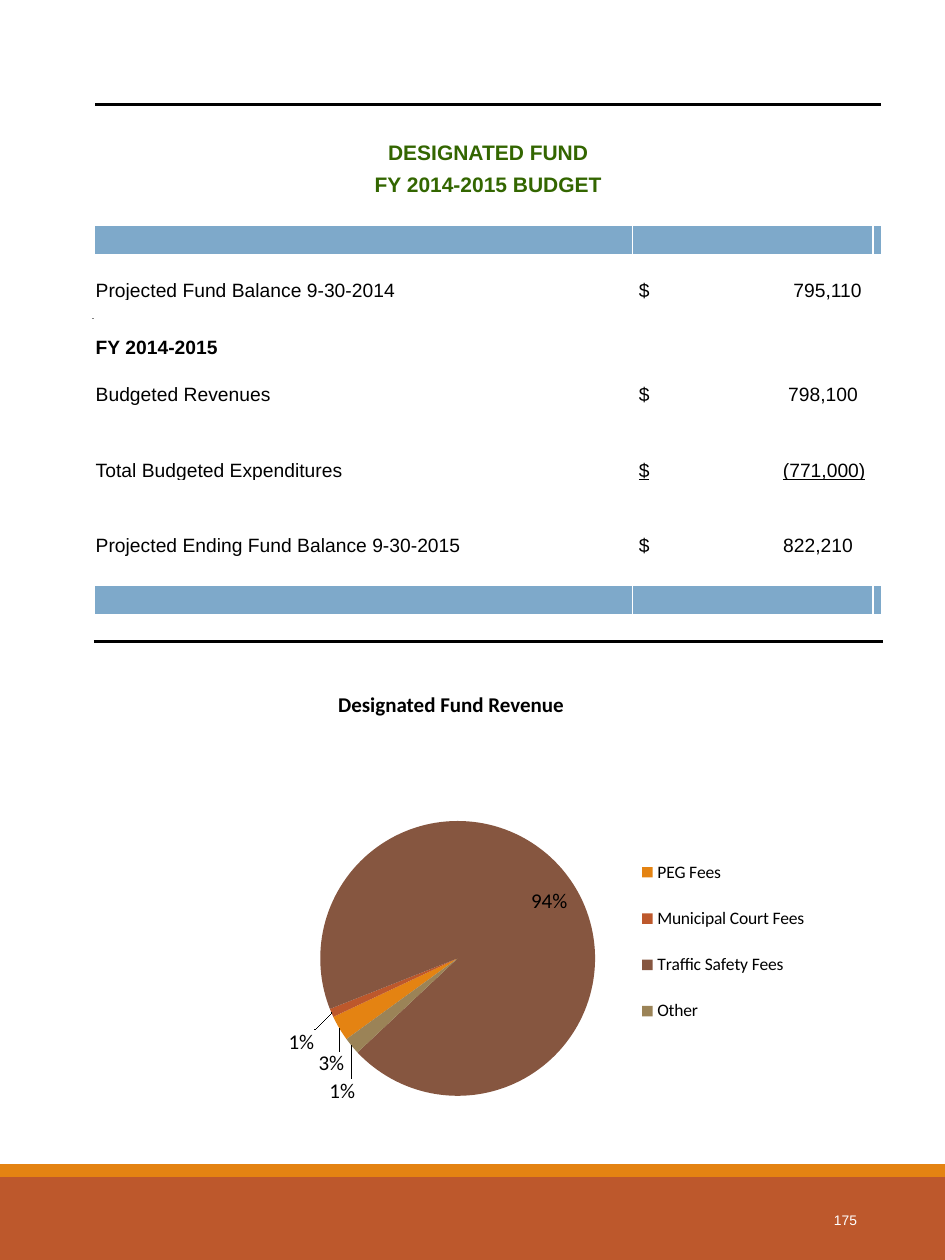
"""Build the designated fund budget page with its summary table and revenue pie."""
from pptx import Presentation
from pptx.chart.data import CategoryChartData
from pptx.dml.color import RGBColor
from pptx.enum.chart import XL_CHART_TYPE as ChartType, XL_LABEL_POSITION as LabelPosition, XL_LEGEND_POSITION as LegendPosition
from pptx.enum.shapes import MSO_CONNECTOR as Connector, MSO_SHAPE as Shape
from pptx.enum.text import MSO_ANCHOR as Anchor, PP_ALIGN as Align
from pptx.oxml import parse_xml
from pptx.oxml.ns import nsdecls
from pptx.util import Inches, Pt

THEME = {
    "black": "000000", "white": "FFFFFF", "green": "336600", "band": "7EA9CA",
    "rule": "808080", "footer": "BD582C", "stripe": "E48312",
    "sans": "Arial", "chart": "Calibri",
    "heading": 12, "body": 11, "legend": 10, "page": 7.9, "gap": 8,
}
COLUMNS = [4.27, 1.91, 0.07]
HEADINGS = {0: "DESIGNATED FUND", 1: "FY 2014-2015 BUDGET"}
LABELS = {
    4: "Projected Fund Balance 9-30-2014",
    6: "FY 2014-2015",
    7: "Budgeted Revenues",
    9: "Total Budgeted Expenditures",
    11: "Projected Ending Fund Balance 9-30-2015",
}
AMOUNTS = {4: ("795,110", 1.77), 7: ("798,100", 1.74), 9: ("(771,000)", 1.8), 11: ("822,210", 1.7)}
ROW_HEIGHTS = {0: 0.48, 1: 0.25, 4: 0.37, 7: 0.37, 9: 0.37, 11: 0.37, 14: 0.21}
ROW_COUNT, USUAL_HEIGHT = 15, 0.23
BAND_ROWS, BOLD_ROW, UNDERLINED_ROW = (3, 13), 6, 9
REVENUE = [
    ("PEG Fees", 3, "E48312", (0.016, 0.048)),
    ("Municipal Court Fees", 1, "BD582C", (-0.015, 0.035)),
    ("Traffic Safety Fees", 94, "865640", None),
    ("Other", 2, "9B8357", (0.013, 0.07)),
]
CUSTOM_LABELS = {3: "1%"}


def color(name):
    return RGBColor.from_string(THEME.get(name, name))


def style(font, size, face, tint="black", bold=False):
    font.size, font.name, font.bold = Pt(THEME[size]), THEME[face], bold
    font.color.rgb = color(tint)


def add_bar(slide, top, height, fill):
    bar = slide.shapes.add_shape(Shape.RECTANGLE, 0, Inches(top), Inches(7.5), Inches(height))
    bar.shadow.inherit = False
    bar.fill.solid()
    bar.fill.fore_color.rgb = color(fill)
    bar.line.fill.background()


def add_rule(slide):
    rule = slide.shapes.add_connector(Connector.STRAIGHT, Inches(0.73), Inches(2.53), Inches(6.87), Inches(2.53))
    rule.line.color.rgb, rule.line.width = color("rule"), Pt(0.5)
    rule._element.spPr.append(parse_xml(f'<a:effectLst {nsdecls("a")}/>'))


def add_border(cell, side):
    border = parse_xml(
        f'<a:ln{side} {nsdecls("a")} w="{Pt(2)}"><a:solidFill>'
        f'<a:srgbClr val="{THEME["black"]}"/></a:solidFill></a:ln{side}>')
    cell._tc.get_or_add_tcPr().insert(0, border)


def write_cell(cell, text, size="body", tint="black", bold=False):
    paragraph = cell.text_frame.paragraphs[0]
    paragraph.text = text
    for run in paragraph.runs:
        style(run.font, size, "sans", tint, bold)
    return paragraph


def add_tab(paragraph, position):
    paragraph._p.get_or_add_pPr().append(parse_xml(
        f'<a:tabLst {nsdecls("a")}><a:tab pos="{Inches(position)}" algn="r"/></a:tabLst>'))


def add_budget_table(slide):
    frame = slide.shapes.add_table(ROW_COUNT, len(COLUMNS), Inches(0.75), Inches(0.83), Inches(6.25), Inches(4.25))
    table = frame.table
    table.first_row = table.horz_banding = False
    for column, width in zip(table.columns, COLUMNS):
        column.width = Inches(width)
    for index, row in enumerate(table.rows):
        row.height = Inches(ROW_HEIGHTS.get(index, USUAL_HEIGHT))
        for cell in row.cells:
            cell.margin_left = cell.margin_right = cell.margin_top = Inches(0.01)
            cell.margin_bottom = 0
            cell.vertical_anchor = Anchor.BOTTOM
            cell.fill.solid()
            cell.fill.fore_color.rgb = color("band" if index in BAND_ROWS else "white")
            cell.text_frame.paragraphs[0]._p.append(parse_xml(
                f'<a:endParaRPr {nsdecls("a")} sz="{THEME["gap"] * 100}"/>'))
            if index in (0, ROW_COUNT - 1):
                add_border(cell, "T" if index == 0 else "B")
    for index, text in HEADINGS.items():
        table.cell(index, 0).merge(table.cell(index, 2))
        write_cell(table.cell(index, 0), text, "heading", "green", True).alignment = Align.CENTER
    for index, text in LABELS.items():
        write_cell(table.cell(index, 0), text, bold=index == BOLD_ROW)
    for index, (amount, tab_position) in AMOUNTS.items():
        cell = table.cell(index, 1)
        cell.margin_left = Inches(0.05)
        paragraph = write_cell(cell, f"$\t{amount}")
        add_tab(paragraph, tab_position)
        for run in paragraph.runs:
            run.font.underline = index == UNDERLINED_ROW


def manual_layout(modes=(), **parts):
    tags = "".join(f'<c:{tag} val="{value}"/>' for tag, value in (*modes, *parts.items()))
    return parse_xml(f'<c:layout {nsdecls("c")}><c:manualLayout>{tags}</c:manualLayout></c:layout>')


def add_revenue_chart(slide):
    data = CategoryChartData()
    data.categories = [name for name, *_ in REVENUE]
    data.add_series("Series 1", [value for _, value, *_ in REVENUE])
    chart = slide.shapes.add_chart(
        ChartType.PIE, Inches(1.08), Inches(6), Inches(5.58), Inches(3.17), data).chart
    chart.has_title = False
    style(chart.font, "heading", "chart")
    chart.has_legend = True
    chart.legend.position = LegendPosition.RIGHT
    chart.legend.include_in_layout = False
    style(chart.legend.font, "legend", "chart")

    series = chart.plots[0].series[0]
    labels = series.data_labels
    labels.show_value, labels.show_percentage = False, True
    labels.number_format, labels.number_format_is_linked = "0%", False
    style(labels.font, "heading", "chart")
    for index, (_, _, fill, offset) in enumerate(REVENUE):
        point = series.points[index]
        point.format.fill.solid()
        point.format.fill.fore_color.rgb = color(fill)
        label = point.data_label
        if index in CUSTOM_LABELS:
            label.text_frame.text = CUSTOM_LABELS[index]
            style(label.text_frame.paragraphs[0].runs[0].font, "heading", "chart")
        else:
            style(label.font, "heading", "chart")
        label.position = LabelPosition.OUTSIDE_END if offset else LabelPosition.INSIDE_END
        element = chart.element.xpath(f'.//c:dLbl[c:idx/@val="{index}"]')[0]
        element.xpath("c:showVal")[0].set("val", "0")
        element.xpath("c:showPercent")[0].set("val", "1")
        if offset:
            element.xpath("c:idx")[0].addnext(manual_layout(x=offset[0], y=offset[1]))

    edges = (("xMode", "edge"), ("yMode", "edge"))
    plot_area = chart.element.xpath(".//c:plotArea")[0]
    for layout in plot_area.xpath("c:layout"):
        plot_area.remove(layout)
    plot_area.insert(0, manual_layout((("layoutTarget", "inner"), *edges), x=0.262, y=0.162, w=0.391, h=0.69))
    legend = chart.element.xpath(".//c:legend")[0]
    for layout in legend.xpath("c:layout"):
        legend.remove(layout)
    legend.xpath("c:legendPos")[0].addnext(manual_layout(edges, x=0.7, y=0.2, w=0.27, h=0.53))
    pie = plot_area.xpath("c:pieChart")[0]
    for angle in pie.xpath("c:firstSliceAng"):
        pie.remove(angle)
    pie.append(parse_xml(f'<c:firstSliceAng {nsdecls("c")} val="234"/>'))


def place_title(slide):
    title = slide.shapes.title
    title.left, title.top, title.width, title.height = map(Inches, (2.29, 5.42, 2.58, 0.33))
    title.text_frame.text = "Designated Fund Revenue"
    title.text_frame.vertical_anchor = Anchor.MIDDLE
    paragraph = title.text_frame.paragraphs[0]
    paragraph.alignment = Align.CENTER
    style(paragraph.runs[0].font, "heading", "chart", bold=True)


def add_page_number(slide):
    box = slide.shapes.add_textbox(Inches(6.09), Inches(9.42), Inches(0.81), Inches(0.53))
    box.text_frame.word_wrap = True
    box.text_frame.vertical_anchor = Anchor.MIDDLE
    paragraph = box.text_frame.paragraphs[0]
    paragraph.text = "175"
    paragraph.alignment = Align.RIGHT
    style(paragraph.runs[0].font, "page", "sans", "white")


def main():
    presentation = Presentation()
    presentation.slide_width, presentation.slide_height = Inches(7.5), Inches(10)
    slide = presentation.slides.add_slide(presentation.slide_layouts[5])
    add_bar(slide, 9.33, 0.67, "footer")
    add_bar(slide, 9.24, 0.1, "stripe")
    add_rule(slide)
    add_budget_table(slide)
    add_revenue_chart(slide)
    place_title(slide)
    add_page_number(slide)
    presentation.save("out.pptx")


if __name__ == "__main__":
    main()
